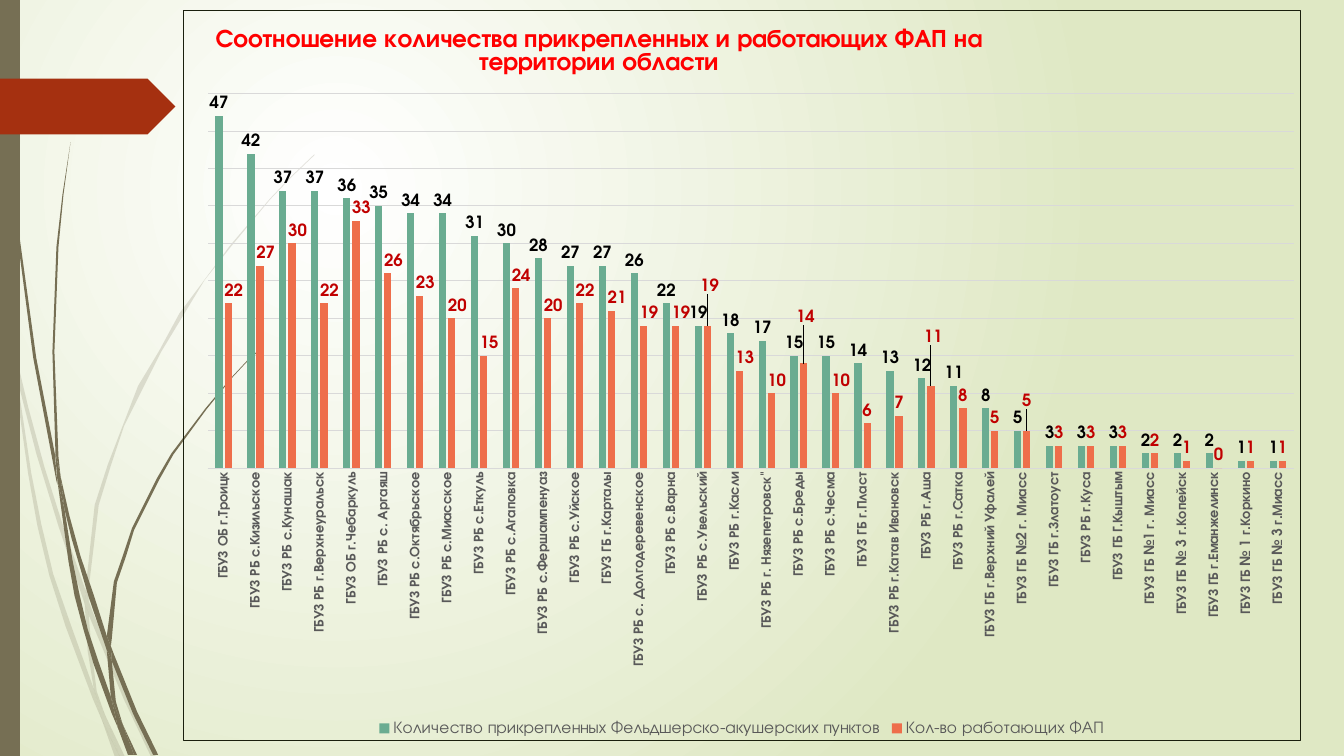
import pptx
import pptx.chart.data
import pptx.enum.chart
import pptx.enum.shapes
import pptx.util
from lxml import etree
from pptx.dml.color import RGBColor
from pptx.oxml.ns import qn
from pptx.util import Cm, Pt

FONT = "TeX Gyre Adventor"
COLORS = {
    "white": "FFFFFF", "light": "DFE8C4", "olive": "766F54", "tag": "A53010",
    "frame": "1A1F0D", "grid": "D9D9D9", "grey": "595959", "title": "FF0000",
    "black": "000000", "dark red": "C00000", "green": "6AAC91", "orange": "EE6E4B",
}
UNIT = Cm(0.0254)  # wisp outlines are drawn on a grid of 0.254 mm

# Each wisp is a closed outline: x, y pairs
PALE_WISPS = [
    [(11, 350), (9, 322), (0, 282), (0, 299), (10, 344)],
    [(58, 522), (84, 599), (85, 586), (62, 520), (44, 463), (28, 404), (14, 345), (17, 376), (36, 450)],
    [(92, 607), (88, 596), (88, 610), (123, 694), (150, 751), (155, 751), (127, 692)],
    [(119, 751), (124, 751), (105, 711)],
    [(93, 683), (70, 619), (53, 570), (41, 520), (31, 469), (17, 376), (11, 350), (28, 470),
     (37, 521), (49, 571), (65, 621), (92, 693), (101, 714), (99, 707)],
    [(84, 599), (87, 646), (93, 683), (96, 692), (105, 711), (103, 706), (96, 686), (91, 646),
     (88, 610), (88, 608)],
    [(88, 584), (98, 501), (110, 462), (123, 423), (160, 349), (203, 278), (229, 245), (268, 198),
     (290, 175), (312, 154), (312, 153), (289, 175), (268, 197), (228, 244), (178, 311), (158, 348),
     (137, 383), (107, 461), (94, 501), (85, 584), (85, 586), (88, 596)],
    [(101, 714), (114, 751), (119, 751)],
    [(88, 608), (88, 610), (88, 596), (85, 586), (84, 599)],
    [(96, 692), (93, 683), (99, 707), (101, 714), (119, 751), (105, 711)],
]
DARK_WISPS = [
    [(7, 110), (17, 233), (33, 355), (56, 477), (57, 481), (55, 457), (55, 453), (36, 355),
     (19, 232), (8, 109), (5, 48), (4, 0), (3, 0), (4, 48)],
    [(88, 592), (106, 645), (106, 633), (106, 631), (93, 590), (80, 552), (69, 512), (60, 472),
     (64, 505), (71, 534)],
    [(113, 649), (110, 641), (111, 656), (132, 708), (152, 749), (157, 749), (136, 706)],
    [(110, 691), (98, 657), (87, 624), (79, 590), (72, 556), (64, 505), (57, 477), (68, 557),
     (74, 591), (83, 625), (93, 659), (111, 708), (117, 722), (116, 717)],
    [(60, 472), (58, 453), (54, 349), (58, 245), (63, 193), (70, 141), (62, 193), (56, 245),
     (52, 349), (55, 449)],
    [(133, 749), (136, 749), (122, 719)],
    [(57, 477), (64, 505), (60, 472), (55, 449), (55, 453)],
    [(111, 633), (116, 578), (125, 552), (133, 526), (158, 476), (172, 451), (205, 406), (231, 374),
     (245, 359), (261, 344), (260, 344), (245, 358), (231, 373), (204, 405), (170, 450), (156, 474),
     (131, 524), (122, 551), (113, 577), (106, 631), (110, 641)],
    [(117, 722), (127, 749), (131, 749)],
    [(106, 645), (110, 691), (116, 706), (122, 719), (121, 716), (115, 696), (111, 656), (109, 651)],
    [(106, 645), (109, 651), (111, 656), (110, 641), (106, 631), (106, 633)],
    [(116, 706), (110, 691), (116, 717), (117, 722), (130, 749), (133, 749), (122, 719)],
]
HOSPITALS = [
    ("ГБУЗ ОБ г.Троицк", 47, 22), ("ГБУЗ РБ с.Кизильское", 42, 27), ("ГБУЗ РБ с.Кунашак", 37, 30),
    ("ГБУЗ РБ г.Верхнеуральск", 37, 22), ("ГБУЗ ОБ г.Чебаркуль", 36, 33), ("ГБУЗ РБ с. Аргаяш", 35, 26),
    ("ГБУЗ РБ с.Октябрьское", 34, 23), ("ГБУЗ РБ с.Миасское", 34, 20), ("ГБУЗ РБ с.Еткуль", 31, 15),
    ("ГБУЗ РБ с.Агаповка", 30, 24), ("ГБУЗ РБ с.Фершампенуаз", 28, 20), ("ГБУЗ РБ с.Уйское", 27, 22),
    ("ГБУЗ ГБ г.Карталы", 27, 21), ("ГБУЗ РБ с. Долгодеревенское", 26, 19), ("ГБУЗ РБ с.Варна", 22, 19),
    ("ГБУЗ РБ с.Увельский", 19, 19), ("ГБУЗ РБ г.Касли", 18, 13), ("ГБУЗ РБ г. Нязепетровск\"", 17, 10),
    ("ГБУЗ РБ с.Бреды", 15, 14), ("ГБУЗ РБ с.Чесма", 15, 10), ("ГБУЗ ГБ г.Пласт", 14, 6),
    ("ГБУЗ РБ г.Катав Ивановск", 13, 7), ("ГБУЗ РБ г.Аша", 12, 11), ("ГБУЗ РБ г.Сатка", 11, 8),
    ("ГБУЗ ГБ г.Верхний Уфалей", 8, 5), ("ГБУЗ ГБ №2 г. Миасс", 5, 5), ("ГБУЗ ГБ г.Златоуст", 3, 3),
    ("ГБУЗ РБ г.Куса", 3, 3), ("ГБУЗ ГБ Г.Кыштым", 3, 3), ("ГБУЗ ГБ №1 г. Миасс", 2, 2),
    ("ГБУЗ ГБ № 3 г.Копейск", 2, 1), ("ГБУЗ ГБ г.Еманжелинск", 2, 0), ("ГБУЗ ГБ № 1 г.Коркино", 1, 1),
    ("ГБУЗ ГБ № 3 г.Миасс", 1, 1),
]


def style(font, size, color, bold=False):
    font.name, font.size, font.bold = FONT, Pt(size), bold
    font.color.rgb = RGBColor.from_string(COLORS[color])


def place(parent, index, **values):
    """Give a chart element a manual layout, as fractions of the chart."""
    for old in parent.findall(qn("c:layout")):
        parent.remove(old)
    layout = etree.Element(qn("c:layout"))
    manual = etree.SubElement(layout, qn("c:manualLayout"))
    for name, value in values.items():
        etree.SubElement(manual, qn("c:" + name)).set("val", str(value))
    parent.insert(index, layout)


prs = pptx.Presentation()
prs.slide_width, prs.slide_height = Cm(33.87), Cm(19.05)
s = prs.slides.add_slide(prs.slide_layouts[6])

# Background: a round glow in the upper left
fill = s.background.fill
fill.gradient()
for stop, color in zip(fill.gradient_stops, ("white", "light")):
    stop.color.rgb = RGBColor.from_string(COLORS[color])
grad = s.element.find(".//" + qn("a:gradFill"))
grad.remove(grad.find(qn("a:lin")))
glow = etree.SubElement(grad, qn("a:path"), {"path": "circle"})
etree.SubElement(glow, qn("a:fillToRect"), l="50000", t="50000", r="100000", b="100000")

# Wisps, side bar and tag
decor = []
for wisps, opacity in ((PALE_WISPS, 20), (DARK_WISPS, 100)):
    group = s.shapes.add_group_shape()
    for outline in wisps:
        builder = group.shapes.build_freeform(*outline[0], scale=float(UNIT))
        builder.add_line_segments(outline[1:], close=True)
        decor.append((builder.convert_to_shape(), "olive", opacity))
SHAPE = pptx.enum.shapes.MSO_SHAPE
bar = s.shapes.add_shape(SHAPE.RECTANGLE, 0, 0, Cm(0.5), prs.slide_height)
tag = s.shapes.add_shape(SHAPE.PENTAGON, 0, Cm(1.98), Cm(4.42), Cm(1.41))
decor += [(bar, "olive", 100), (tag, "tag", 100)]
for sp, color, opacity in decor:
    sp.shadow.inherit = False
    sp.line.fill.background()
    sp.fill.solid()
    sp.fill.fore_color.rgb = RGBColor.from_string(COLORS[color])
    if opacity < 100:
        rgb = sp.element.spPr.find(qn("a:solidFill")).find(qn("a:srgbClr"))
        etree.SubElement(rgb, qn("a:alpha"), val=str(opacity * 1000))

# Chart
names, attached, working = zip(*HOSPITALS)
data = pptx.chart.data.CategoryChartData()
data.categories = names
data.add_series("Количество прикрепленных Фельдшерско-акушерских пунктов", attached)
data.add_series("Кол-во работающих ФАП", working)
XL = pptx.enum.chart
chart = s.shapes.add_chart(XL.XL_CHART_TYPE.COLUMN_CLUSTERED, Cm(4.6), Cm(0.25),
                           Cm(28.19), Cm(18.42), data).chart
style(chart.font, 10, "black")
space = chart.element
frame = etree.Element(qn("c:spPr"))
etree.SubElement(frame, qn("a:noFill"))
edge = etree.SubElement(frame, qn("a:ln"), w=str(Pt(0.75)))
etree.SubElement(etree.SubElement(edge, qn("a:solidFill")), qn("a:srgbClr"), val=COLORS["frame"])
space.find(qn("c:chart")).addnext(frame)
place(space.find(".//" + qn("c:plotArea")), 0, layoutTarget="inner", xMode="edge", yMode="edge",
      x=0.022, y=0.114, w=0.972, h=0.513)

chart.has_title = True
r = chart.chart_title.text_frame.paragraphs[0].add_run()
r.text = "Соотношение количества прикрепленных и работающих ФАП на территории области"
style(r.font, 18, "title", bold=True)
place(space.find(".//" + qn("c:title")), 1, xMode="edge", yMode="edge", x=0.025, y=0.014)

chart.has_legend = True
chart.legend.position = XL.XL_LEGEND_POSITION.BOTTOM
chart.legend.include_in_layout = False
style(chart.legend.font, 12, "grey")

names_axis, counts_axis = chart.category_axis, chart.value_axis
style(names_axis.tick_labels.font, 10, "grey", bold=True)
names_axis.major_tick_mark = XL.XL_TICK_MARK.NONE
names_axis.format.line.width = Pt(0.75)
names_axis.format.line.color.rgb = RGBColor.from_string(COLORS["grid"])
turn = space.find(".//" + qn("c:catAx")).find(qn("c:txPr")).find(qn("a:bodyPr"))
turn.set("rot", "-5400000")
turn.set("vert", "horz")
counts_axis.minimum_scale, counts_axis.maximum_scale, counts_axis.major_unit = 0, 50, 5
counts_axis.has_major_gridlines = True
counts_axis.major_gridlines.format.line.width = Pt(0.75)
counts_axis.major_gridlines.format.line.color.rgb = RGBColor.from_string(COLORS["grid"])
counts_axis.visible = False

plot = chart.plots[0]
plot.gap_width, plot.overlap, plot.vary_by_categories = 219, -27, False
OUTSIDE = XL.XL_LABEL_POSITION.OUTSIDE_END
for series, color, label_color in zip(plot.series, ("green", "orange"), ("black", "dark red")):
    series.format.fill.solid()
    series.format.fill.fore_color.rgb = RGBColor.from_string(COLORS[color])
    series.data_labels.show_value = True
    series.data_labels.position = OUTSIDE
    style(series.data_labels.font, 12, label_color, bold=True)

# Labels of working points move right, or up where the bars are close
moves = {i: (0.005, 0) for i in (*range(15), 16, 17, 19)}
moves |= {15: (0.002, -0.037), 18: (0.002, -0.046), 22: (0.002, -0.05), 25: (0, -0.023)}
for i, (dx, dy) in sorted(moves.items()):
    label = plot.series[1].points[i].data_label
    style(label.font, 12, "dark red", bold=True)
    label.position = OUTSIDE
for dlbl in space.iter(qn("c:dLbl")):
    dx, dy = moves[int(dlbl.find(qn("c:idx")).get("val"))]
    place(dlbl, 1, x=dx, y=dy)

prs.save("out.pptx")
